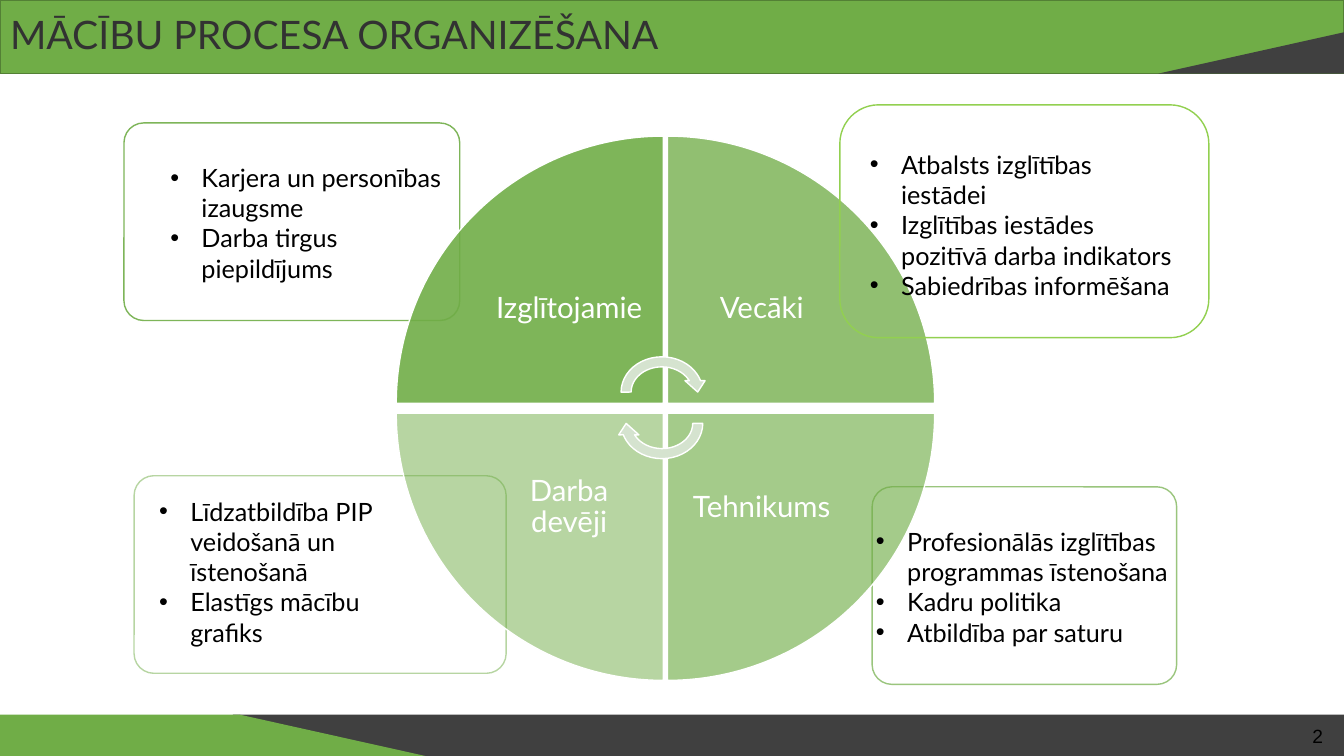
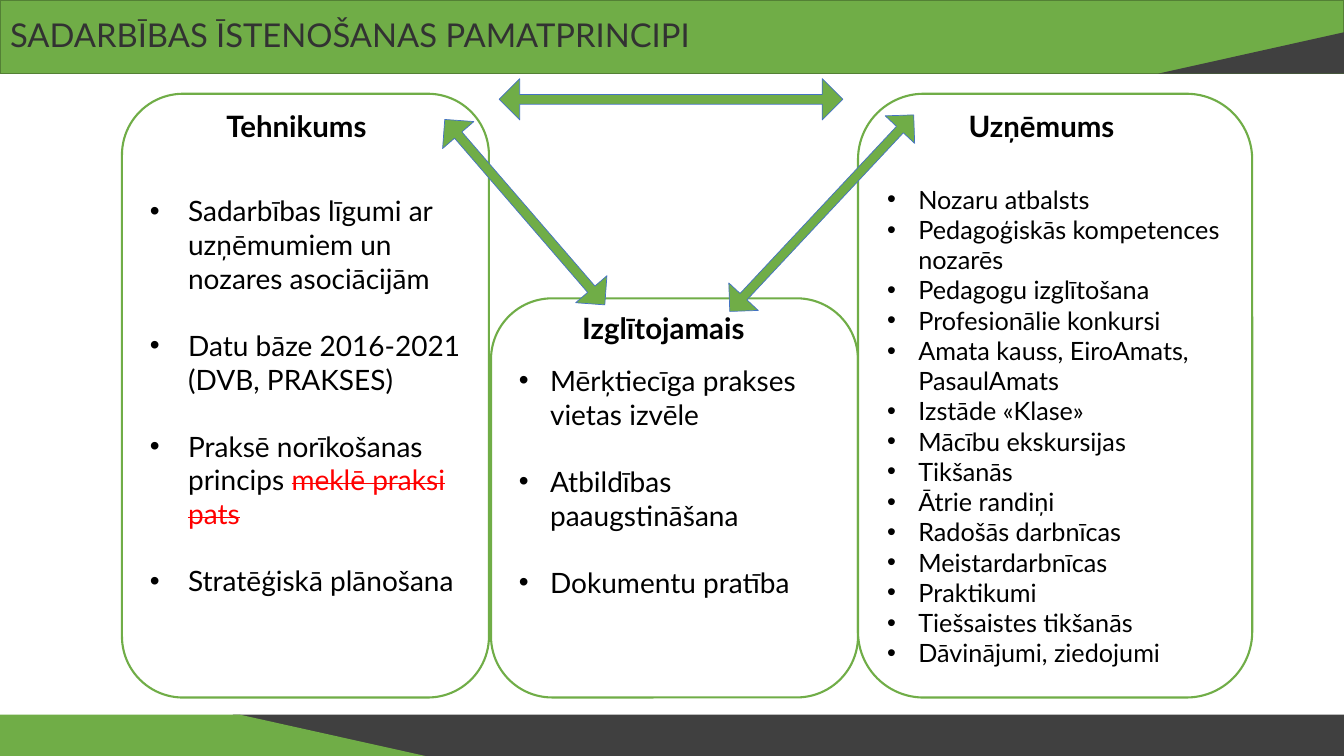
"""Builds two slides on organising studies and cooperation in a vocational school."""
from dataclasses import dataclass

from lxml.etree import SubElement
from pptx import Presentation
from pptx.dml.color import RGBColor
from pptx.enum.shapes import MSO_SHAPE as Preset
from pptx.enum.text import MSO_ANCHOR as Anchor, MSO_AUTO_SIZE as AutoSize, PP_ALIGN as Align
from pptx.oxml.ns import qn
from pptx.util import Inches, Pt


@dataclass(frozen=True)
class Theme:
    """Colours, font and type sizes of the deck."""
    green: str = "70AD47"
    green_edge: str = "538035"
    lime: str = "92D050"
    dark: str = "404040"
    title_ink: str = "323232"
    ink: str = "000000"
    white: str = "FFFFFF"
    red: str = "FF0000"
    pale: str = "D5E3CF"
    blue: str = "4472C4"
    font: str = "Lato"
    number_font: str = "Arial"
    title: float = 28
    title_small: float = 23.4
    heading: float = 21
    body_large: float = 20
    body: float = 18
    number: float = 13.7


THEME = Theme()
WIDTH, HEIGHT = 13.33, 7.5
HEADER_HEIGHT, FOOTER_HEIGHT = 0.73, 0.41
FOOTER_TOP = HEIGHT - FOOTER_HEIGHT
CORNER_WIDTH, FOOTER_GREEN_WIDTH = 1.84, 2.38

CALLOUTS = [
    ((1.33, 4.72, 3.69, 1.96), 50),
    ((8.65, 4.83, 3.02, 1.96), 70),
    ((1.23, 1.22, 3.33, 1.96), 90),
]
WEDGE, WEDGE_LABEL = 2.65, 1.87
WEDGE_LEFTS, WEDGE_TOPS = (3.93, 6.62), (1.35, 4.1)
WEDGES = [
    ("Izglītojamie", 0, 0, 0, 90),
    ("Vecāki", 1, 0, 90, 77),
    ("Tehnikums", 1, 1, 180, 63),
    ("Darba devēji", 0, 1, 270, 50),
]
ROLES = [
    ((1.48, 4.87, 2.63, 1.92), ["Līdzatbildība PIP veidošanā un īstenošanā", "Elastīgs mācību grafiks"]),
    ((1.59, 1.56, 3.12, 1.62), ["Karjera un personības izaugsme", "Darba tirgus piepildījums"]),
    ((8.53, 1.43, 3.26, 1.92), ["Atbalsts izglītības iestādei",
                                "Izglītības iestādes pozitīvā darba indikators",
                                "Sabiedrības informēšana"]),
    ((8.59, 5.17, 3.4, 1.62), ["Profesionālās izglītības programmas īstenošana",
                               "Kadru politika", "Atbildība par saturu"]),
]
SCHOOL = [
    "Sadarbības līgumi ar uzņēmumiem un nozares asociācijām",
    "Datu bāze 2016-2021 (DVB, PRAKSES)",
    "Praksē norīkošanas princips ",
    "Stratēģiskā plānošana",
]
LEARNER = ["Mērķtiecīga prakses vietas izvēle", "Atbildības paaugstināšana", "Dokumentu pratība"]
COMPANY = [
    "Nozaru atbalsts", "Pedagoģiskās kompetences nozarēs", "Pedagogu izglītošana",
    "Profesionālie konkursi", "Amata kauss, EiroAmats, PasaulAmats", "Izstāde «Klase»",
    "Mācību ekskursijas", "Tikšanās", "Ātrie randiņi", "Radošās darbnīcas",
    "Meistardarbnīcas", "Praktikumi", "Tiešsaistes tikšanās", "Dāvinājumi, ziedojumi",
]
HEADINGS = [("Tehnikums", 1.74, 1.02), ("Izglītojamais", 5.38, 3.03), ("Uzņēmums", 9.13, 1.02)]
LINKS = [
    ((5, 0.89, 0.41, 2.43), 319.2),
    ((7.95, 0.78, 0.4, 2.67), 43.1),
    ((6.45, -0.72, 0.41, 3.41), 270),
]


def set_opacity(color_format, percent):
    """Give a solid fill or line colour the stated opacity."""
    for colour in color_format.iter(qn("a:srgbClr")):
        SubElement(colour, qn("a:alpha"), val=str(percent * 1000))


def add_figure(slide, preset, box, fill=None, line=None, width=1, rotation=0,
               adjustments=(), fill_opacity=100, line_opacity=100):
    """Add a preset shape with explicit fill and line."""
    figure = slide.shapes.add_shape(preset, *map(Inches, box))
    figure.shadow.inherit = False
    figure.rotation = rotation
    for index, value in enumerate(adjustments):
        figure.adjustments[index] = value
    if fill:
        figure.fill.solid()
        figure.fill.fore_color.rgb = RGBColor.from_string(fill)
        if fill_opacity < 100:
            set_opacity(figure.element.spPr.find(qn("a:solidFill")), fill_opacity)
    else:
        figure.fill.background()
    if line:
        figure.line.color.rgb = RGBColor.from_string(line)
        figure.line.width = Pt(width)
        if line_opacity < 100:
            set_opacity(figure.element.spPr.find(qn("a:ln")), line_opacity)
    else:
        figure.line.fill.background()
    return figure


def add_run(paragraph, text, size, color=THEME.ink, font=THEME.font, bold=False):
    """Append one formatted run."""
    run = paragraph.add_run()
    run.text = text
    run.font.name = font
    run.font.size = Pt(size)
    run.font.bold = bold
    run.font.color.rgb = RGBColor.from_string(color)
    return run


def add_label(slide, text, box, size, color=THEME.ink, align=Align.CENTER,
              anchor=Anchor.TOP, inset=None, spacing=None, **style):
    """Add a text box with a single paragraph."""
    frame = slide.shapes.add_textbox(*map(Inches, box)).text_frame
    frame.word_wrap = True
    frame.vertical_anchor = anchor
    if inset is not None:
        frame.margin_left = frame.margin_right = Inches(inset)
        frame.margin_top = frame.margin_bottom = Inches(inset)
    paragraph = frame.paragraphs[0]
    paragraph.alignment = align
    paragraph.line_spacing = spacing
    add_run(paragraph, text, size, color, **style)


def fill_bullets(frame, items, size, indent=0.31, gap=0):
    """Write a bulleted list into a text frame."""
    frame.word_wrap = True
    for index, item in enumerate(items):
        paragraph = frame.add_paragraph() if index else frame.paragraphs[0]
        paragraph.alignment = Align.LEFT
        properties = paragraph._p.get_or_add_pPr()
        properties.set("marL", str(Inches(indent)))
        properties.set("indent", str(-Inches(indent)))
        SubElement(properties, qn("a:buFont"), typeface="Arial")
        SubElement(properties, qn("a:buChar"), char="•")
        if index and gap:
            paragraph.space_before = Pt(gap)
        add_run(paragraph, item, size)


def set_title(slide, text, size):
    """Place and format the slide title over the header band."""
    title = slide.shapes.title
    title.left = title.top = 0
    title.width, title.height = Inches(WIDTH), Inches(HEADER_HEIGHT)
    frame = title.text_frame
    frame.auto_size = AutoSize.NONE
    frame.word_wrap = True
    frame.vertical_anchor = Anchor.MIDDLE
    paragraph = frame.paragraphs[0]
    paragraph.alignment = Align.LEFT
    paragraph.line_spacing = 0.9
    add_run(paragraph, text, size, THEME.title_ink)


def add_bands(slide, layout):
    """Draw the header and footer bands and hand them to the layout."""
    corner_left = WIDTH - CORNER_WIDTH
    corner_top = HEADER_HEIGHT - FOOTER_HEIGHT
    bands = [
        (Preset.RECTANGLE, (2.31, FOOTER_TOP, WIDTH - 2.31, FOOTER_HEIGHT), THEME.dark, None),
        (Preset.RECTANGLE, (0, 0, WIDTH, HEADER_HEIGHT), THEME.green, THEME.green_edge),
        (Preset.RIGHT_TRIANGLE, (corner_left, corner_top, CORNER_WIDTH, FOOTER_HEIGHT),
         THEME.dark, None),
        (Preset.RECTANGLE, (0, FOOTER_TOP, FOOTER_GREEN_WIDTH, FOOTER_HEIGHT), THEME.green, None),
        (Preset.RIGHT_TRIANGLE, (FOOTER_GREEN_WIDTH, FOOTER_TOP, CORNER_WIDTH, FOOTER_HEIGHT),
         THEME.green, None),
    ]
    for index, (preset, box, fill, line) in enumerate(bands):
        band = add_figure(slide, preset, box, fill, line).element
        if fill == THEME.dark and preset == Preset.RIGHT_TRIANGLE:
            band.spPr.xfrm.set("flipH", "1")
        band.nvSpPr.cNvPr.set("id", str(100 + index))
        layout.shapes.element.insert(2 + index, band)


def add_wedge(slide, text, column, row, rotation, opacity):
    """Add a quarter of the circle with its label near the centre."""
    left, top = WEDGE_LEFTS[column], WEDGE_TOPS[row]
    add_figure(slide, Preset.PIE_WEDGE, (left, top, WEDGE, WEDGE), THEME.green, THEME.white,
               rotation=rotation, fill_opacity=opacity)
    offset = WEDGE - WEDGE_LABEL
    label_left = left + (0 if column else offset)
    label_top = top + (0 if row else offset)
    add_label(slide, text, (label_left, label_top, WEDGE_LABEL, WEDGE_LABEL), THEME.heading,
              THEME.white, anchor=Anchor.MIDDLE, inset=0.16, spacing=0.9)


def add_panel(slide, box, items, size, indent=0.31, gap=0, top=0.05, bottom=0.05):
    """Add a rounded panel holding a bulleted list."""
    panel = add_figure(slide, Preset.ROUNDED_RECTANGLE, box, THEME.white, THEME.green, 1.5)
    frame = panel.text_frame
    frame.vertical_anchor = Anchor.MIDDLE
    frame.margin_top, frame.margin_bottom = Inches(top), Inches(bottom)
    fill_bullets(frame, items, size, indent, gap)
    return frame


def add_link(slide, box, rotation):
    """Add a two-way block arrow with a thin shaft."""
    arrow = add_figure(slide, Preset.UP_DOWN_ARROW, box, THEME.green, THEME.blue, 0.5,
                       rotation, (0.234, 0.5))
    for number, guide in enumerate(arrow.element.spPr.iter(qn("a:gd")), start=1):
        guide.set("name", f"adj{number}")


def build_organisation(slide):
    """Fill the slide with the four-part circle and its callouts."""
    set_title(slide, "MĀCĪBU PROCESA ORGANIZĒŠANA", THEME.title)
    for box, opacity in CALLOUTS:
        add_figure(slide, Preset.ROUNDED_RECTANGLE, box, THEME.white, THEME.green,
                   adjustments=(0.1,), fill_opacity=90, line_opacity=opacity)
    for wedge in WEDGES:
        add_wedge(slide, *wedge)
    for top, rotation in ((3.49, 0), (3.8, 180)):
        add_figure(slide, Preset.CIRCULAR_ARROW, (6.11, top, 0.91, 0.8), THEME.pale,
                   THEME.white, rotation=rotation)
    add_label(slide, "2", (12.41, 7.1, 0.81, 0.4), THEME.number, align=Align.RIGHT,
              anchor=Anchor.MIDDLE, font=THEME.number_font)
    add_figure(slide, Preset.ROUNDED_RECTANGLE, (8.33, 1.04, 3.66, 2.31), line=THEME.lime)
    for box, items in ROLES:
        role = slide.shapes.add_textbox(*map(Inches, box))
        fill_bullets(role.text_frame, items, THEME.body)


def build_cooperation(slide):
    """Fill the slide with three linked partner panels."""
    set_title(slide, "SADARBĪBAS ĪSTENOŠANAS PAMATPRINCIPI", THEME.title_small)
    school = add_panel(slide, (1.21, 0.93, 3.64, 5.99), SCHOOL, THEME.body_large, 0.38, gap=24)
    rejected = add_run(school.paragraphs[2], "meklē praksi pats", THEME.body_large, THEME.red)
    rejected.font._element.set("strike", "sngStrike")
    add_panel(slide, (4.87, 2.96, 3.64, 3.96), LEARNER, THEME.body_large, gap=24, bottom=0.38)
    add_panel(slide, (8.51, 0.93, 3.91, 5.99), COMPANY, THEME.body, top=0.65)
    for text, left, top in HEADINGS:
        add_label(slide, text, (left, top, 2.4, 0.45), THEME.heading, bold=True)
    for box, rotation in LINKS:
        add_link(slide, box, rotation)


def main():
    """Build and save the deck."""
    deck = Presentation()
    deck.slide_width, deck.slide_height = Inches(WIDTH), Inches(HEIGHT)
    layout = deck.slide_layouts[5]
    organisation = deck.slides.add_slide(layout)
    add_bands(organisation, layout)
    build_organisation(organisation)
    build_cooperation(deck.slides.add_slide(layout))
    deck.save("out.pptx")


if __name__ == "__main__":
    main()
